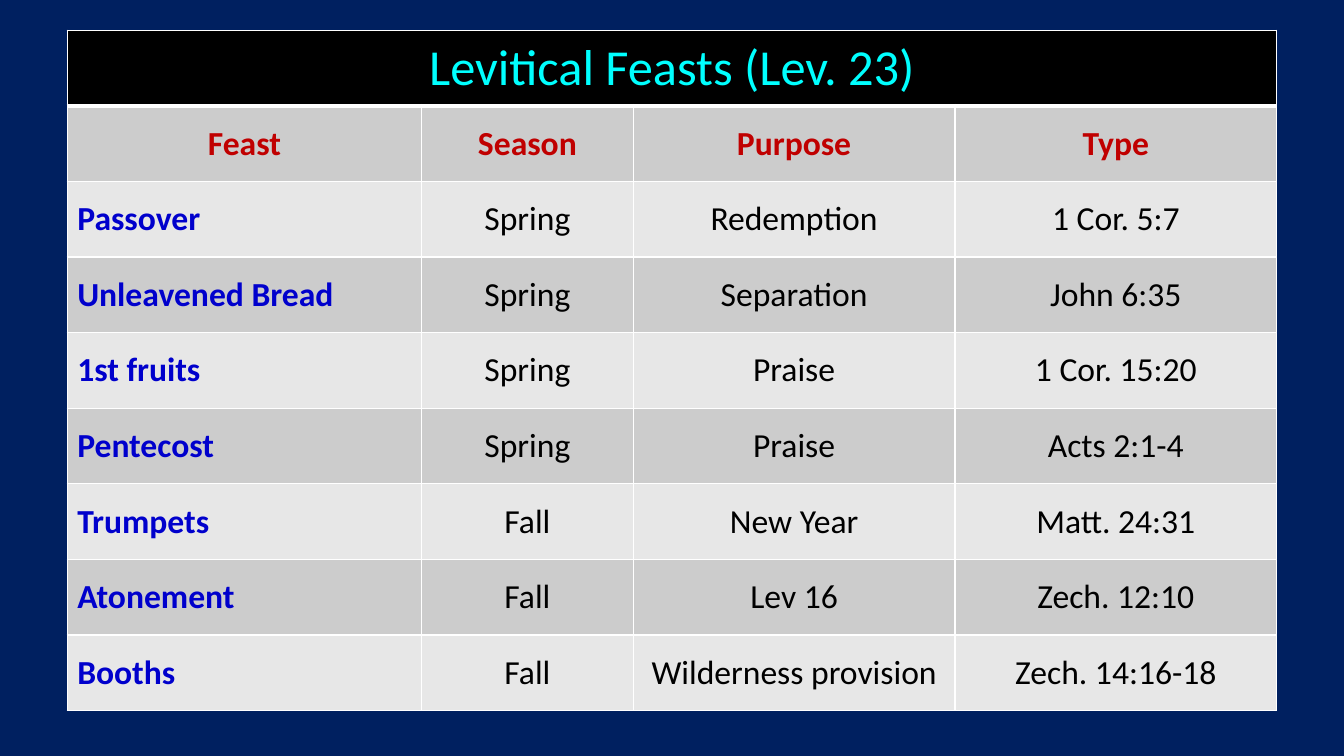
import pptx
import pptx.util
import pptx.dml.color
import pptx.enum.text
import pptx.oxml
import pptx.oxml.ns

RGBColor = pptx.dml.color.RGBColor
Align = pptx.enum.text.PP_ALIGN

NAVY = RGBColor(0x00, 0x20, 0x60)
BLACK = RGBColor(0x00, 0x00, 0x00)
WHITE = RGBColor(0xFF, 0xFF, 0xFF)
CYAN = RGBColor(0x00, 0xFF, 0xFF)
RED = RGBColor(0xC0, 0x00, 0x00)
BLUE = RGBColor(0x00, 0x00, 0xCC)
DARK = RGBColor(0xCC, 0xCC, 0xCC)
LIGHT = RGBColor(0xE7, 0xE7, 0xE7)

FONT = "Calibri"
WIDTH = pptx.util.Inches(13.33)
HEIGHT = pptx.util.Inches(7.5)
SHARES = (29.3, 17.5, 26.6, 26.6)  # column widths, percent of the table

TITLE = "Levitical Feasts (Lev. 23)"
HEADS = ("Feast", "Season", "Purpose", "Type")
FEASTS = (
    ("Passover", "Spring", "Redemption", "1 Cor. 5:7"),
    ("Unleavened Bread", "Spring", "Separation", "John 6:35"),
    ("1st fruits", "Spring", "Praise", "1 Cor. 15:20"),
    ("Pentecost", "Spring", "Praise", "Acts 2:1-4"),
    ("Trumpets", "Fall", "New Year", "Matt. 24:31"),
    ("Atonement", "Fall", "Lev 16", "Zech. 12:10"),
    ("Booths", "Fall", "Wilderness provision", "Zech. 14:16-18"),
)


def add_edges(cell, top=1, bottom=1):
    """Draw white borders of the given point widths; call before filling."""
    props = cell._tc.get_or_add_tcPr()
    for side, width in (("L", 1), ("R", 1), ("T", top), ("B", bottom)):
        props.append(pptx.oxml.parse_xml(
            f'<a:ln{side} {pptx.oxml.ns.nsdecls("a")} w="{pptx.util.Pt(width)}">'
            f'<a:solidFill><a:srgbClr val="{WHITE}"/></a:solidFill></a:ln{side}>'))


def paint(cell, color):
    cell.fill.solid()
    cell.fill.fore_color.rgb = color


def write(cell, text, color, size=24, bold=False, align=Align.CENTER):
    cell.vertical_anchor = pptx.enum.text.MSO_ANCHOR.MIDDLE
    para = cell.text_frame.paragraphs[0]
    para.alignment = align
    run = para.add_run()
    run.text = text
    run.font.name = FONT
    run.font.size = pptx.util.Pt(size)
    run.font.bold = bold
    run.font.color.rgb = color


def add_grid(slide):
    """Add the empty table, sized as shares of the slide."""
    wide, row = int(WIDTH * 0.9), int(HEIGHT * 0.1)
    count = len(FEASTS) + 2
    frame = slide.shapes.add_table(
        count, len(HEADS), int(WIDTH * 0.05), int(HEIGHT * 0.04), wide, row * count)
    table = frame.table
    for column, share in zip(table.columns, SHARES):
        column.width = int(wide * share / 100)
    for line in table.rows:
        line.height = row
    return table


def add_title(table):
    for cell in table.rows[0].cells:
        add_edges(cell, bottom=3)
        paint(cell, BLACK)
    first = table.cell(0, 0)
    first.merge(table.cell(0, len(HEADS) - 1))
    write(first, TITLE, CYAN, size=36)


def add_body(table):
    for row, texts in enumerate((HEADS,) + FEASTS, start=1):
        for col, text in enumerate(texts):
            cell = table.cell(row, col)
            add_edges(cell, top=3 if row == 1 else 1)
            paint(cell, DARK if row % 2 else LIGHT)
            if row == 1:
                write(cell, text, RED, bold=True)
            elif col == 0:
                write(cell, text, BLUE, bold=True, align=Align.LEFT)
            else:
                write(cell, text, BLACK)


def main():
    deck = pptx.Presentation()
    deck.slide_width, deck.slide_height = WIDTH, HEIGHT
    slide = deck.slides.add_slide(deck.slide_layouts[6])
    slide.background.fill.solid()
    slide.background.fill.fore_color.rgb = NAVY
    table = add_grid(slide)
    add_title(table)
    add_body(table)
    deck.save("out.pptx")


if __name__ == "__main__":
    main()
